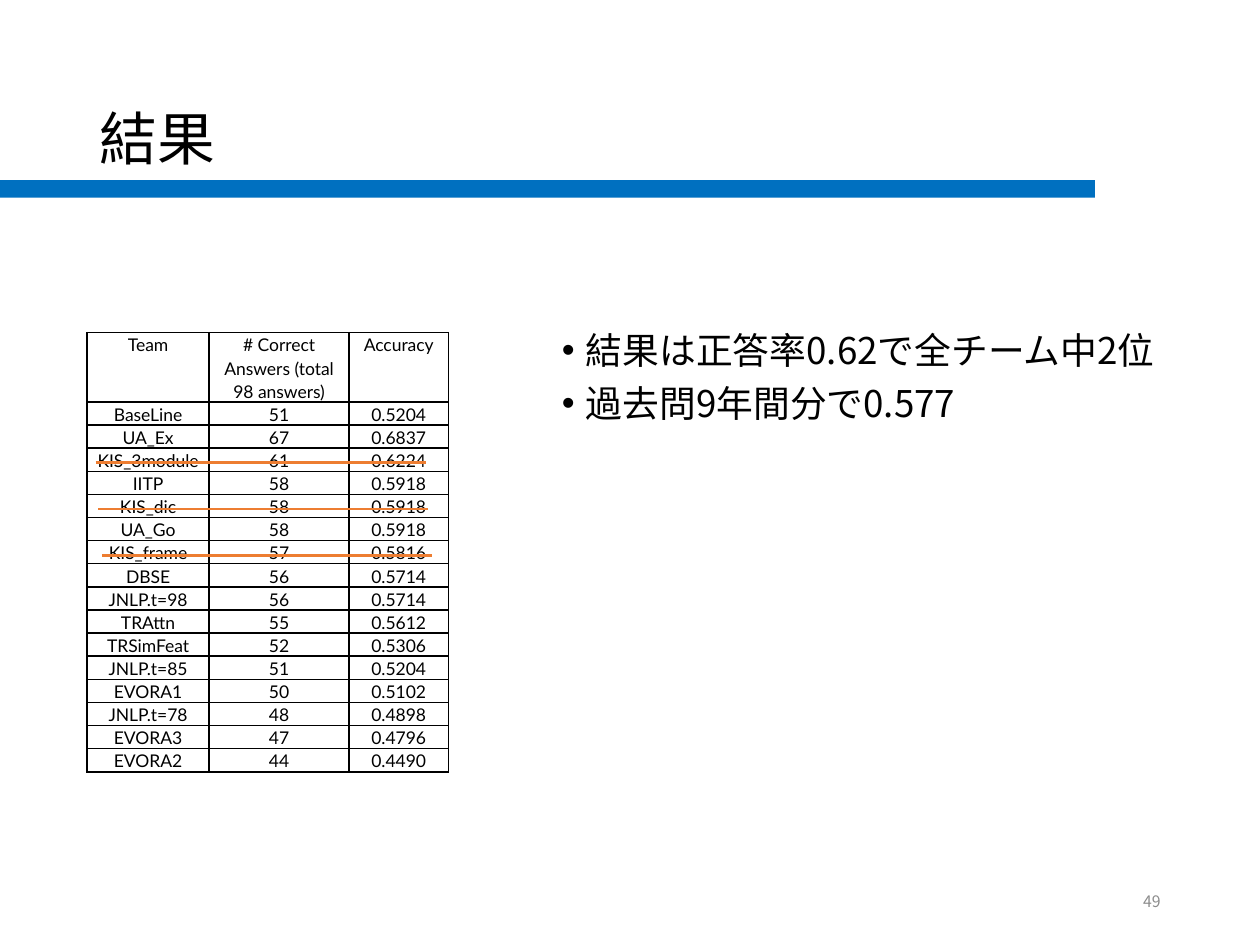
from lxml.etree import SubElement
from pptx import Presentation
from pptx.dml.color import RGBColor
from pptx.enum.shapes import MSO_CONNECTOR as Link, MSO_SHAPE as Shape
from pptx.enum.text import MSO_ANCHOR as Anchor, MSO_AUTO_SIZE as Fit, PP_ALIGN as Align
from pptx.oxml import parse_xml
from pptx.oxml.ns import nsdecls, qn
from pptx.util import Inches, Pt

BLACK = RGBColor(0x00, 0x00, 0x00)
BLUE = RGBColor(0x00, 0x70, 0xC0)
ORANGE = RGBColor(0xED, 0x7D, 0x31)
GRAY = RGBColor(0x8C, 0x8C, 0x8C)
SANS = "Noto Sans CJK JP"


def write(par, text, size=10, color=BLACK, font=SANS, align=Align.LEFT, lead=1.0, gap=0):
    par.alignment, par.line_spacing = align, lead
    par.space_before = Pt(gap)
    run = par.add_run()
    run.text = text
    run.font.size, run.font.name = Pt(size), font
    run.font.color.rgb = color
    SubElement(run.font._element, qn("a:ea")).set("typeface", font)


def edge(cell):
    props = cell._tc.get_or_add_tcPr()
    for i, side in enumerate("LRTB"):
        props.insert(i, parse_xml(
            f'<a:ln{side} {nsdecls("a")} w="12700"><a:solidFill>'
            f'<a:srgbClr val="{BLACK}"/></a:solidFill></a:ln{side}>'))


deck = Presentation()
deck.slide_width, deck.slide_height = Inches(10), Inches(7.5)
slide = deck.slides.add_slide(deck.slide_layouts[1])
shapes = slide.shapes

# Blue bar, behind everything
bar = shapes.add_shape(Shape.RECTANGLE, 0, Inches(1.43), Inches(8.69), Inches(0.14))
bar.shadow.inherit = False
bar.fill.solid()
bar.fill.fore_color.rgb = BLUE
bar.line.fill.background()
shapes._spTree.insert(2, bar._element)

# Title
title = shapes.title
title.left, title.top = Inches(0.69), Inches(0.4)
title.width, title.height = Inches(8.62), Inches(1.45)
frame = title.text_frame
frame.auto_size, frame.vertical_anchor = Fit.NONE, Anchor.MIDDLE
write(frame.paragraphs[0], "結果", size=33, lead=0.9)

# Result table
rows = [
    ("Team", "# Correct Answers (total 98 answers)", "Accuracy"),
    ("BaseLine", "51", "0.5204"),
    ("UA_Ex", "67", "0.6837"),
    ("KIS_3module", "61", "0.6224"),
    ("IITP", "58", "0.5918"),
    ("KIS_dic", "58", "0.5918"),
    ("UA_Go", "58", "0.5918"),
    ("KIS_frame", "57", "0.5816"),
    ("DBSE", "56", "0.5714"),
    ("JNLP.t=98", "56", "0.5714"),
    ("TRAttn", "55", "0.5612"),
    ("TRSimFeat", "52", "0.5306"),
    ("JNLP.t=85", "51", "0.5204"),
    ("EVORA1", "50", "0.5102"),
    ("JNLP.t=78", "48", "0.4898"),
    ("EVORA3", "47", "0.4796"),
    ("EVORA2", "44", "0.4490"),
]
table = shapes.add_table(len(rows), 3, Inches(0.69), Inches(2.64),
                         Inches(2.87), Inches(3.46)).table
table.first_row = table.horz_banding = False
for col, width in zip(table.columns, (0.97, 1.11, 0.79)):
    col.width = Inches(width)
for r, row in enumerate(rows):
    table.rows[r].height = Inches(0.18 if r else 0.54)
    for c, text in enumerate(row):
        cell = table.cell(r, c)
        cell.margin_left = cell.margin_right = Inches(0.08)
        cell.margin_top = cell.margin_bottom = 0
        cell.fill.background()
        edge(cell)
        write(cell.text_frame.paragraphs[0], text, font="Lato",
              align=Align.CENTER, lead=1.1)

# Page number
page = shapes.add_textbox(Inches(7.06), Inches(6.95), Inches(2.25), Inches(0.4))
frame = page.text_frame
frame.word_wrap, frame.vertical_anchor = True, Anchor.MIDDLE
write(frame.paragraphs[0], "49", size=9, color=GRAY, align=Align.RIGHT)

# Findings
body = slide.placeholders[1]
body.left, body.top = Inches(4.36), Inches(2.59)
body.width, body.height = Inches(5.04), Inches(3.57)
frame = body.text_frame
frame.auto_size = Fit.NONE
for i, text in enumerate(("結果は正答率0.62で全チーム中2位", "過去問9年間分で0.577")):
    par = frame.add_paragraph() if i else frame.paragraphs[0]
    write(par, text, size=21, lead=0.9, gap=7.5)
    props = par._p.get_or_add_pPr()
    props.set("marL", str(Inches(0.19)))
    props.set("indent", str(-Inches(0.19)))
    SubElement(props, qn("a:buFont")).set("typeface", "Arial")
    SubElement(props, qn("a:buChar")).set("char", "•")

# Strikes through the KIS rows, two rows apart
for i, left in enumerate((0.76, 0.78, 0.81)):
    y = Inches(3.67 + 0.37 * i)
    strike = shapes.add_connector(Link.STRAIGHT, Inches(left), y, Inches(left + 2.62), y)
    strike.line.color.rgb = ORANGE
    strike.line.width = Pt(1.5)
    SubElement(strike._element.spPr, qn("a:effectLst"))

deck.save("out.pptx")
